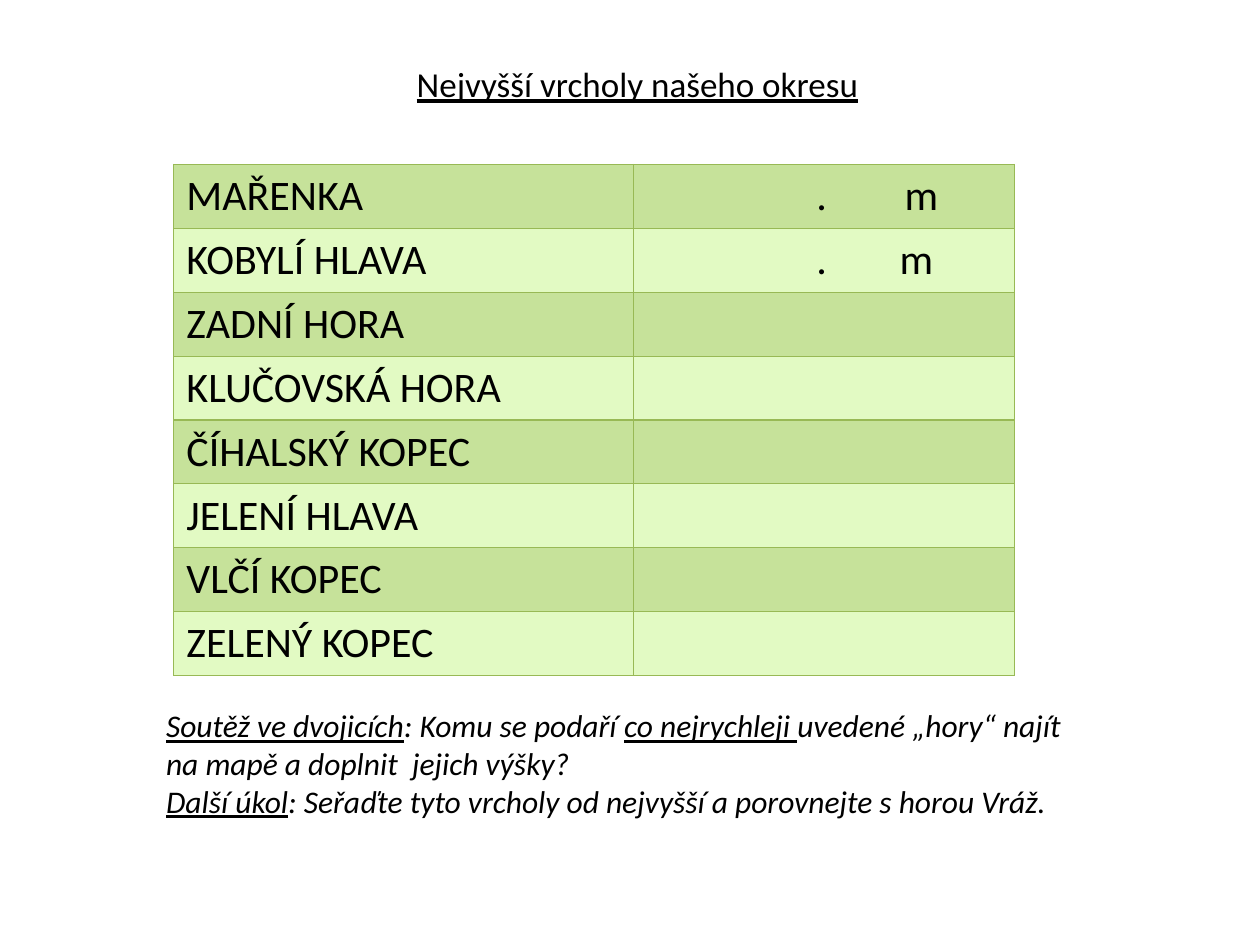
import pptx
import pptx.dml.color
import pptx.enum.text
import pptx.util
import lxml.etree

COLORS = {"text": "000000", "border": "98B955", "dark": "C6E29A", "light": "E2FAC3"}
FONT = "Calibri"
WIDTH, HEIGHT = pptx.util.Inches(10), pptx.util.Inches(7.5)
ROW = HEIGHT / 15  # table row height


def add_span(para, text, size, underline=False, italic=False):
    span = para.add_run()
    span.text = text
    span.font.name = FONT
    span.font.size = pptx.util.Pt(size)
    span.font.bold = False
    span.font.underline = underline
    span.font.italic = italic
    span.font.color.rgb = pptx.dml.color.RGBColor.from_string(COLORS["text"])


def add_element(parent, tag, **attributes):
    element = lxml.etree.SubElement(parent, pptx.oxml.ns.qn(tag))
    for name, value in attributes.items():
        element.set(name, str(value))
    return element


deck = pptx.Presentation()
deck.slide_width, deck.slide_height = WIDTH, HEIGHT
page = deck.slides.add_slide(deck.slide_layouts[5])

# Title
title = page.shapes.title
title.left, title.top = int(WIDTH * 0.319), int(HEIGHT * 0.059)
title.width, title.height = int(WIDTH * 0.374), int(HEIGHT * 0.059)
title.text_frame.word_wrap = False
title.text_frame.auto_size = pptx.enum.text.MSO_AUTO_SIZE.NONE
add_span(title.text_frame.paragraphs[0], "Nejvyšší vrcholy našeho okresu", 20, underline=True)

# Table of peaks, with a tab stop for the point and one for the unit
peaks = ["MAŘENKA", "KOBYLÍ HLAVA", "ZADNÍ HORA", "KLUČOVSKÁ HORA",
         "ČÍHALSKÝ KOPEC", "JELENÍ HLAVA", "VLČÍ KOPEC", "ZELENÝ KOPEC"]
unit_stops = {0: (1.35, 2.05), 1: (1.35, 2.01)}
column_shares = (0.365, 0.302)
table = page.shapes.add_table(
    len(peaks), len(column_shares), int(WIDTH * 0.138), int(HEIGHT * 0.174),
    int(WIDTH * sum(column_shares)), int(ROW * len(peaks))).table
table.first_row = table.horz_banding = False
for column, share in zip(table.columns, column_shares):
    column.width = int(WIDTH * share)

for number, peak in enumerate(peaks):
    table.rows[number].height = int(ROW)
    for cell in table.rows[number].cells:
        properties = cell._tc.get_or_add_tcPr()
        for side in ("L", "R", "T", "B"):
            line = add_element(properties, f"a:ln{side}", w=pptx.util.Pt(0.75))
            add_element(add_element(line, "a:solidFill"), "a:srgbClr", val=COLORS["border"])
        cell.fill.solid()
        shade = COLORS["light" if number % 2 else "dark"]
        cell.fill.fore_color.rgb = pptx.dml.color.RGBColor.from_string(shade)
    add_span(table.cell(number, 0).text_frame.paragraphs[0], peak, 24)
    if number in unit_stops:
        para = table.cell(number, 1).text_frame.paragraphs[0]
        stops = add_element(para._p.get_or_add_pPr(), "a:tabLst")
        for stop in unit_stops[number]:
            add_element(stops, "a:tab", pos=pptx.util.Inches(stop), algn="l")
        add_span(para, "\t.\tm", 24)

# Tasks: each paragraph is a list of (text, underlined)
tasks = [
    [("Soutěž ve dvojicích", True), (": Komu se podaří ", False),
     ("co nejrychleji ", True), ("uvedené „hory“ najít", False)],
    [("na mapě a doplnit  jejich výšky?", False)],
    [("Další úkol", True),
     (": Seřaďte tyto vrcholy od nejvyšší a porovnejte s horou Vráž.", False)],
]
box = page.shapes.add_textbox(int(WIDTH * 0.122), int(HEIGHT * 0.741),
                              int(WIDTH * 0.744), int(HEIGHT * 0.135))
box.text_frame.word_wrap = False
for number, task in enumerate(tasks):
    para = box.text_frame.add_paragraph() if number else box.text_frame.paragraphs[0]
    for text, underline in task:
        add_span(para, text, 18, underline, italic=True)

deck.save("out.pptx")
